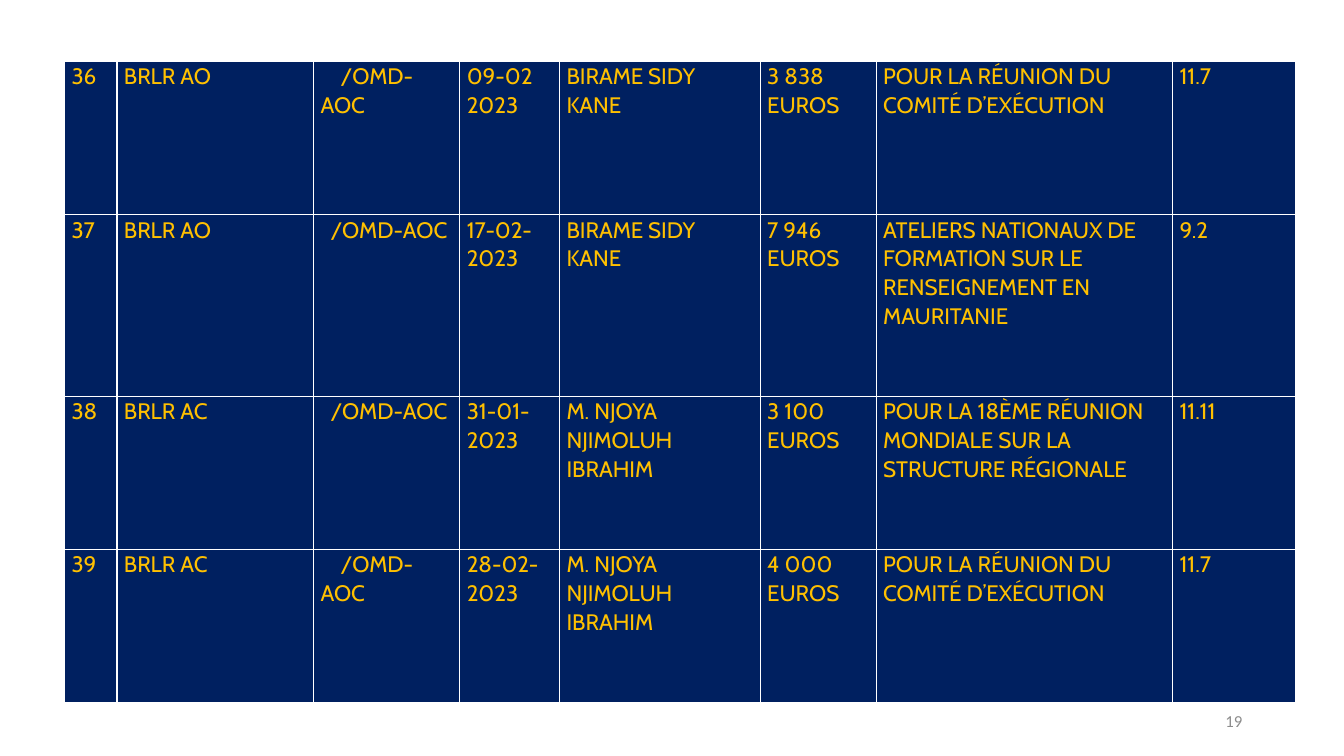
import pptx
import pptx.util
import pptx.dml.color
import pptx.enum.text
import pptx.oxml
import pptx.oxml.ns

Inches = pptx.util.Inches
Pt = pptx.util.Pt

NAVY = "002060"
GOLD = "FFC000"
WHITE = "FFFFFF"
GRAY = "8C8C8C"

COLUMN_WIDTHS = [0.52, 1.95, 1.45, 0.99, 1.99, 1.15, 2.94, 1.22]
ROW_HEIGHTS = [1.52, 1.8, 1.52, 1.52]
REFERENCE_COLUMN = 2
REFERENCE_INDENTS = [0.2, 0.1, 0.1, 0.2]
MISSIONS = [
    ["36", "BRLR AO", "/OMD-AOC", "09-02 2023", "BIRAME SIDY KANE", "3 838 EUROS",
     "POUR LA RÉUNION DU COMITÉ D’EXÉCUTION", "11.7"],
    ["37", "BRLR AO", "/OMD-AOC", "17-02-2023", "BIRAME SIDY KANE", "7 946 EUROS",
     "ATELIERS NATIONAUX DE FORMATION SUR LE RENSEIGNEMENT EN MAURITANIE", "9.2"],
    ["38", "BRLR AC", "/OMD-AOC", "31-01-2023", "M. NJOYA NJIMOLUH IBRAHIM", "3 100 EUROS",
     "POUR LA 18ÈME RÉUNION MONDIALE SUR LA STRUCTURE RÉGIONALE", "11.11"],
    ["39", "BRLR AC", "/OMD-AOC", "28-02-2023", "M. NJOYA NJIMOLUH IBRAHIM", "4 000 EUROS",
     "POUR LA RÉUNION DU COMITÉ D’EXÉCUTION", "11.7"],
]


def color(value):
    return pptx.dml.color.RGBColor.from_string(value)


def set_font(paragraph, name, size, value):
    paragraph.font.name = name
    paragraph.font.size = Pt(size)
    paragraph.font.color.rgb = color(value)


def add_borders(cell, value, width):
    properties = cell._tc.get_or_add_tcPr()
    for side in ("lnL", "lnR", "lnT", "lnB"):
        properties.append(pptx.oxml.parse_xml(
            f'<a:{side} {pptx.oxml.ns.nsdecls("a")} w="{Pt(width)}">'
            f'<a:solidFill><a:srgbClr val="{value}"/></a:solidFill></a:{side}>'))


def fill_cell(cell, text, indent):
    cell.margin_left = cell.margin_right = Inches(0.07)
    cell.margin_top = cell.margin_bottom = 0
    add_borders(cell, WHITE, 1)
    cell.fill.solid()
    cell.fill.fore_color.rgb = color(NAVY)
    cell.text = text
    paragraph = cell.text_frame.paragraphs[0]
    paragraph.line_spacing = 1.07
    set_font(paragraph, "Cabin", 16, GOLD)
    if indent:
        paragraph._p.get_or_add_pPr().set("indent", str(Inches(indent)))


def add_missions_table(slide):
    table = slide.shapes.add_table(
        len(ROW_HEIGHTS), len(COLUMN_WIDTHS), Inches(0.64), Inches(0.61),
        Inches(sum(COLUMN_WIDTHS)), Inches(sum(ROW_HEIGHTS))).table
    table.first_row = False
    table.horz_banding = False
    for column, width in zip(table.columns, COLUMN_WIDTHS):
        column.width = Inches(width)
    for row, height, mission, reference_indent in zip(
            table.rows, ROW_HEIGHTS, MISSIONS, REFERENCE_INDENTS):
        row.height = Inches(height)
        for index, text in enumerate(mission):
            indent = reference_indent if index == REFERENCE_COLUMN else 0
            fill_cell(row.cells[index], text, indent)


def add_page_number(slide, number):
    box = slide.shapes.add_textbox(Inches(9.42), Inches(6.95), Inches(3), Inches(0.4))
    frame = box.text_frame
    frame.word_wrap = True
    frame.vertical_anchor = pptx.enum.text.MSO_ANCHOR.MIDDLE
    paragraph = frame.paragraphs[0]
    paragraph.text = number
    paragraph.alignment = pptx.enum.text.PP_ALIGN.RIGHT
    set_font(paragraph, "Calibri", 12, GRAY)


def main():
    presentation = pptx.Presentation()
    presentation.slide_width = Inches(13.33)
    presentation.slide_height = Inches(7.5)
    slide = presentation.slides.add_slide(presentation.slide_layouts[6])
    add_missions_table(slide)
    add_page_number(slide, "19")
    presentation.save("out.pptx")


if __name__ == "__main__":
    main()
